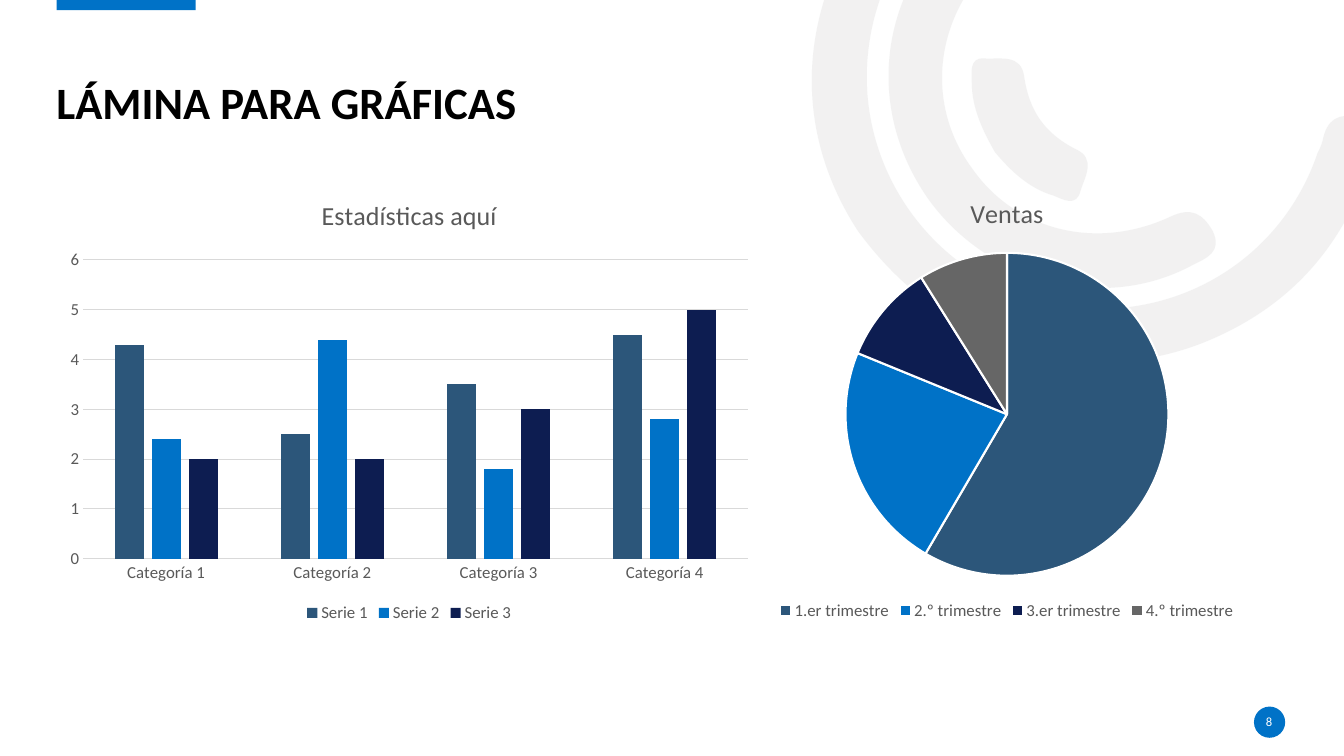
from math import cos, radians, sin

from lxml.etree import SubElement
from pptx import Presentation
from pptx.chart.data import CategoryChartData
from pptx.dml.color import RGBColor
from pptx.enum.chart import XL_CHART_TYPE, XL_LEGEND_POSITION, XL_TICK_MARK
from pptx.enum.shapes import MSO_SHAPE
from pptx.enum.text import MSO_ANCHOR, MSO_AUTO_SIZE, PP_ALIGN
from pptx.oxml.ns import qn
from pptx.util import Inches, Pt

FONT = "Calibri"
BLACK = RGBColor(0x00, 0x00, 0x00)
WHITE = RGBColor(0xFF, 0xFF, 0xFF)
BLUE = RGBColor(0x00, 0x72, 0xC7)
STEEL = RGBColor(0x2C, 0x56, 0x7A)
NAVY = RGBColor(0x0D, 0x1D, 0x51)
GRAY = RGBColor(0x66, 0x66, 0x66)
TEXT_GRAY = RGBColor(0x59, 0x59, 0x59)
GRID_GRAY = RGBColor(0xD9, 0xD9, 0xD9)
ARC_GRAY = RGBColor(0xE7, 0xE6, 0xE6)
PALETTE = [STEEL, BLUE, NAVY, GRAY]
ARC_ROTATION = 144.2

# Each arc: a start point, then cubic curves (two controls and an end), in inches on the slide
OUTER_ARC = [
    (8.51, 2.29),
    (7.99, 1.49, 7.87, 0.5, 8.38, -0.5), (8.9, -1.52, 9.76, -2.03, 10.9, -2.07),
    (11.05, -2.07, 11.21, -2.1, 11.31, -1.95), (11.44, -1.75, 11.27, -1.54, 10.98, -1.54),
    (9.67, -1.54, 8.65, -0.59, 8.6, 0.68), (8.56, 1.81, 9.36, 2.81, 10.46, 3.02),
    (11.6, 3.24, 12.7, 2.61, 13.07, 1.52), (13.09, 1.48, 13.11, 1.44, 13.12, 1.4),
    (13.16, 1.19, 13.27, 1.11, 13.49, 1.17), (13.73, 1.24, 13.67, 1.41, 13.61, 1.56),
    (13.34, 2.45, 12.78, 3.07, 11.91, 3.41), (10.7, 3.87, 9.36, 3.45, 8.51, 2.29),
]
MIDDLE_ARC = [
    (9.22, 1.99),
    (8.62, 1.15, 8.69, 0.07, 9.4, -0.68), (9.51, -0.79, 9.62, -0.95, 9.8, -0.78),
    (9.95, -0.64, 9.97, -0.5, 9.79, -0.32), (9.25, 0.26, 9.2, 1.08, 9.65, 1.68),
    (10.08, 2.29, 10.88, 2.49, 11.61, 2.15), (11.82, 2.05, 11.93, 2.12, 12.03, 2.29),
    (12.13, 2.5, 11.97, 2.56, 11.83, 2.63), (10.96, 3.1, 9.83, 2.82, 9.22, 1.99),
]
INNER_ARC = [
    (9.87, 1.51),
    (9.75, 1.3, 9.64, 1.07, 9.64, 0.82), (9.64, 0.73, 9.61, 0.57, 9.76, 0.58),
    (9.92, 0.59, 10.13, 0.53, 10.16, 0.76), (10.21, 1.1, 10.36, 1.32, 10.67, 1.48),
    (10.88, 1.57, 10.76, 1.76, 10.72, 1.89), (10.68, 2.06, 10.55, 1.98, 10.45, 1.94),
    (10.21, 1.87, 10.03, 1.7, 9.87, 1.51),
]


def format_font(font, size, color, bold=False):
    font.name = FONT
    font.size = Pt(size)
    font.bold = bold
    font.color.rgb = color


def write_text(shape, text, size, color, bold=False, align=PP_ALIGN.LEFT,
               anchor=MSO_ANCHOR.MIDDLE, line_spacing=None):
    frame = shape.text_frame
    frame.word_wrap = True
    frame.auto_size = MSO_AUTO_SIZE.NONE
    frame.vertical_anchor = anchor
    frame.margin_left = frame.margin_right = frame.margin_top = frame.margin_bottom = 0
    paragraph = frame.paragraphs[0]
    paragraph.alignment = align
    paragraph.line_spacing = line_spacing
    run = paragraph.add_run()
    run.text = text
    format_font(run.font, size, color, bold)


def place(shape, left, top, width, height):
    shape.left, shape.top = Inches(left), Inches(top)
    shape.width, shape.height = Inches(width), Inches(height)


def fill_plain(shape, color):
    shape.shadow.inherit = False
    shape.fill.solid()
    shape.fill.fore_color.rgb = color
    shape.line.fill.background()


def add_arc(slide, outline, left, top, width, height):
    cosine, sine = cos(radians(ARC_ROTATION)), sin(radians(ARC_ROTATION))

    def to_box(x, y):
        x, y = x - left - width / 2, y - top - height / 2
        return (Inches(width / 2 + x * cosine + y * sine),
                Inches(height / 2 - x * sine + y * cosine))

    start, *curves = outline
    builder = slide.shapes.build_freeform(*to_box(*start))
    builder.add_line_segments([to_box(*curve[4:6]) for curve in curves], close=True)
    arc = builder.convert_to_shape()
    place(arc, left, top, width, height)
    arc.rotation = ARC_ROTATION
    fill_plain(arc, ARC_GRAY)
    color = arc.fill._xPr.find(qn("a:solidFill"))[0]
    SubElement(color, qn("a:alpha")).set("val", "53000")

    # Turn the straight segments into cubic curves
    geometry = next(arc._element.iter(qn("a:path")))
    geometry.set("w", str(Inches(width)))
    geometry.set("h", str(Inches(height)))
    for child in list(geometry):
        geometry.remove(child)
    segments = [("a:moveTo", start)] + [("a:cubicBezTo", curve) for curve in curves]
    for tag, numbers in segments:
        segment = SubElement(geometry, qn(tag))
        for x, y in zip(numbers[::2], numbers[1::2]):
            point = SubElement(segment, qn("a:pt"))
            for name, value in zip("xy", to_box(x, y)):
                point.set(name, str(value))
    SubElement(geometry, qn("a:close"))


def add_title(slide, text, left, top, width, height):
    title = slide.shapes.title
    place(title, left, top, width, height)
    write_text(title, text, 32, BLACK, bold=True, anchor=MSO_ANCHOR.BOTTOM, line_spacing=0.9)


def add_page_number(slide, number, left, top, size):
    box = [Inches(value) for value in (left, top, size, size)]
    badge = slide.shapes.add_shape(MSO_SHAPE.OVAL, *box)
    fill_plain(badge, BLUE)
    label = slide.shapes.add_textbox(Inches(left - 0.01), Inches(top + 0.05),
                                     Inches(size + 0.01), Inches(0.2))
    write_text(label, number, 9, WHITE, align=PP_ALIGN.CENTER)


def add_titled_chart(slide, kind, title, categories, series, left, top, width, height):
    data = CategoryChartData()
    data.categories = categories
    for name, values in series:
        data.add_series(name, values)
    box = [Inches(value) for value in (left, top, width, height)]
    chart = slide.shapes.add_chart(kind, *box, data).chart
    format_font(chart.font, 10, BLACK)
    chart.has_title = True
    run = chart.chart_title.text_frame.paragraphs[0].add_run()
    run.text = title
    format_font(run.font, 18.6, TEXT_GRAY)
    chart.has_legend = True
    chart.legend.position = XL_LEGEND_POSITION.BOTTOM
    chart.legend.include_in_layout = False
    format_font(chart.legend.font, 12, TEXT_GRAY)
    return chart


def add_column_chart(slide, left, top, width, height):
    chart = add_titled_chart(
        slide, XL_CHART_TYPE.COLUMN_CLUSTERED, "Estadísticas aquí",
        [f"Categoría {number}" for number in range(1, 5)],
        [("Serie 1", (4.3, 2.5, 3.5, 4.5)), ("Serie 2", (2.4, 4.4, 1.8, 2.8)),
         ("Serie 3", (2, 2, 3, 5))],
        left, top, width, height)
    plot = chart.plots[0]
    plot.vary_by_categories = False
    plot.gap_width = 219
    plot.overlap = -27
    for series, color in zip(plot.series, PALETTE):
        series.format.fill.solid()
        series.format.fill.fore_color.rgb = color
    for axis in (chart.category_axis, chart.value_axis):
        axis.major_tick_mark = axis.minor_tick_mark = XL_TICK_MARK.NONE
        format_font(axis.tick_labels.font, 12, TEXT_GRAY)
    chart.value_axis.format.line.fill.background()
    chart.value_axis.has_major_gridlines = True
    for lines in (chart.category_axis, chart.value_axis.major_gridlines):
        lines.format.line.color.rgb = GRID_GRAY
        lines.format.line.width = Pt(0.75)


def add_pie_chart(slide, left, top, width, height):
    chart = add_titled_chart(
        slide, XL_CHART_TYPE.PIE, "Ventas",
        ["1.er trimestre", "2.º trimestre", "3.er trimestre", "4.º trimestre"],
        [("Series 1", (59, 23, 10, 9))], left, top, width, height)
    plot = chart.plots[0]
    plot.vary_by_categories = True
    for index, color in enumerate(PALETTE):
        slice_format = plot.series[0].points[index].format
        slice_format.fill.solid()
        slice_format.fill.fore_color.rgb = color
        slice_format.line.color.rgb = WHITE
        slice_format.line.width = Pt(1.5)


def main():
    presentation = Presentation()
    presentation.slide_width = Inches(40 / 3)
    presentation.slide_height = Inches(7.5)
    slide = presentation.slides.add_slide(presentation.slide_layouts[5])

    # Background arcs and top accent
    add_arc(slide, OUTER_ARC, 8.13, -2.02, 4.85, 6)
    add_arc(slide, MIDDLE_ARC, 9.01, -0.78, 2.13, 4.26)
    add_arc(slide, INNER_ARC, 9.8, 0.37, 0.78, 1.83)
    accent = slide.shapes.add_shape(
        MSO_SHAPE.RECTANGLE, Inches(0.56), Inches(-0.02), Inches(1.38), Inches(0.12))
    accent.rotation = 180
    fill_plain(accent, BLUE)

    # Title, page number and charts
    add_title(slide, "LÁMINA PARA GRÁFICAS", 0.56, 0.27, 12.19, 1.01)
    add_page_number(slide, "8", 12.44, 7.01, 0.31)
    add_column_chart(slide, 0.56, 1.77, 7, 4.45)
    add_pie_chart(slide, 6.65, 1.75, 6.68, 4.45)
    presentation.save("out.pptx")


if __name__ == "__main__":
    main()
